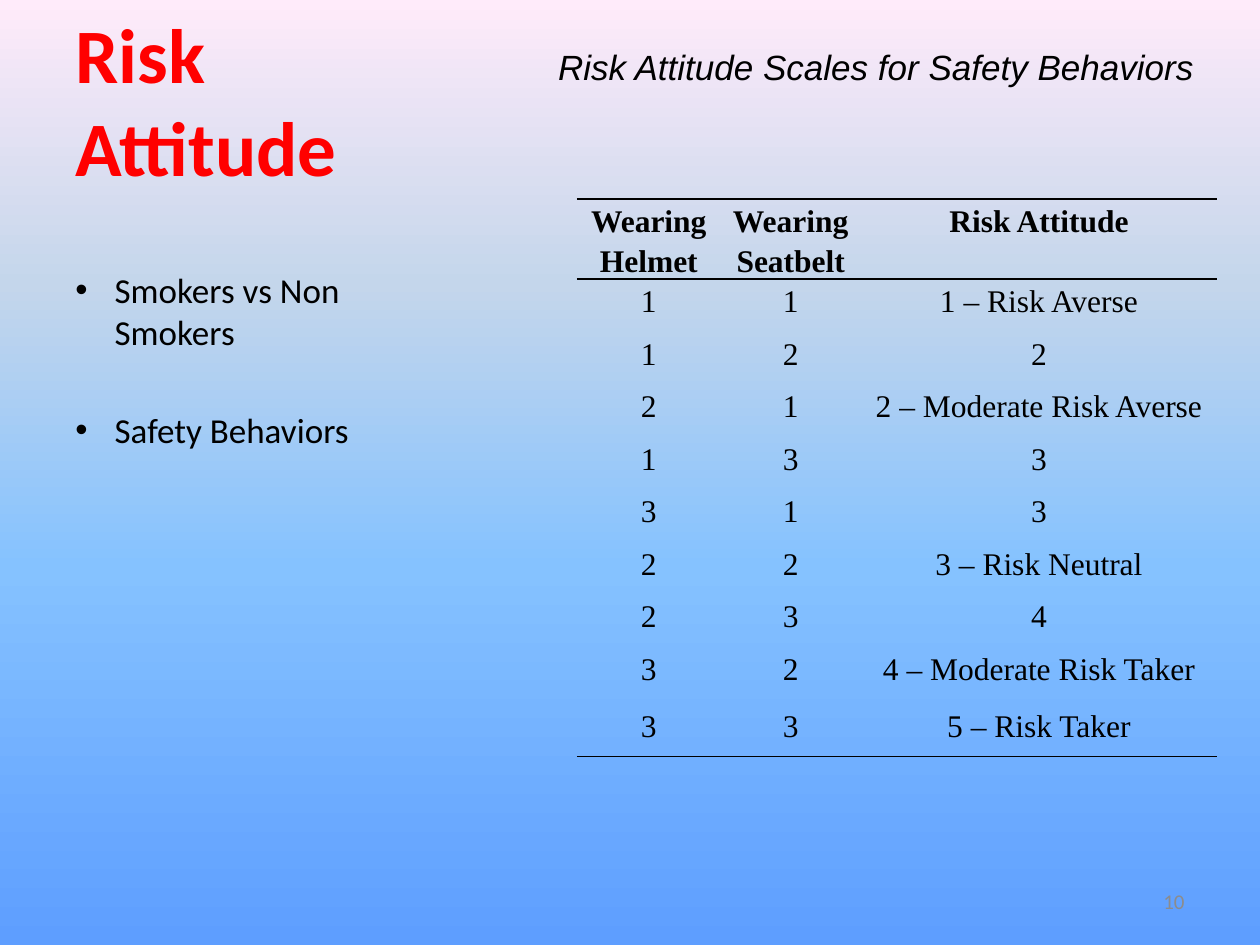
from dataclasses import dataclass

from lxml.etree import SubElement
from pptx import Presentation
from pptx.dml.color import RGBColor
from pptx.enum.text import MSO_ANCHOR, PP_ALIGN
from pptx.oxml.ns import qn
from pptx.util import Cm, Pt

COLORS = {"title": "FF0000", "text": "000000", "number": "8C8C8C"}
BACKGROUND = {0: "5E9EFF", 40: "85C2FF", 70: "C4D6EB", 100: "FFEBFA"}
COLUMNS = (2.9, 2.82, 7.19)
ROW_HEIGHT, TALL_ROW_HEIGHT, TALL_ROW = 1.06, 1.14, 8
ROWS = (
    ("Wearing Helmet", "Wearing Seatbelt", "Risk Attitude"),
    ("1", "1", "1 – Risk Averse"),
    ("1", "2", "2"),
    ("2", "1", "2 – Moderate Risk Averse"),
    ("1", "3", "3"),
    ("3", "1", "3"),
    ("2", "2", "3 – Risk Neutral"),
    ("2", "3", "4"),
    ("3", "2", "4 – Moderate Risk Taker"),
    ("3", "3", "5 – Risk Taker"),
)


@dataclass
class TextItem:
    """Text box with its place in centimetres and its type."""

    text: str
    left: float
    top: float
    width: float
    height: float
    size: float
    color: str = "text"
    font: str = "Calibri"
    bold: bool = False
    italic: bool = False
    align: PP_ALIGN = PP_ALIGN.LEFT
    anchor: MSO_ANCHOR = MSO_ANCHOR.TOP
    bullets: bool = False


ITEMS = (
    TextItem("Risk Attitude", 1.27, 0.76, 8.36, 3.23, 44, "title",
             bold=True, anchor=MSO_ANCHOR.BOTTOM),
    TextItem("Smokers vs Non Smokers\nSafety Behaviors",
             1.27, 5.28, 8.36, 11.73, 20, bullets=True),
    TextItem("10", 18.21, 17.65, 5.92, 1.02, 12, "number",
             align=PP_ALIGN.RIGHT, anchor=MSO_ANCHOR.MIDDLE),
    TextItem("Risk Attitude Scales for Safety Behaviors",
             11, 0.79, 13.77, 1.88, 20, font="Arial", italic=True),
)


def format_runs(p, size: float, color: str, font: str,
                bold: bool = False, italic: bool = False) -> None:
    """Apply one type style to every run of a paragraph."""
    for r in p.runs:
        r.font.size = Pt(size)
        r.font.name = font
        r.font.bold = bold
        r.font.italic = italic
        r.font.color.rgb = RGBColor.from_string(COLORS[color])


def add_bullet(p, first: bool) -> None:
    """Give a paragraph a hanging bullet and its spacing."""
    pPr = p._p.get_or_add_pPr()
    pPr.set("marL", str(Cm(0.79)))
    pPr.set("indent", str(-Cm(0.79)))
    p.space_before = Pt(4 if first else 32.4)
    SubElement(pPr, qn("a:buFont"), typeface="Arial")
    SubElement(pPr, qn("a:buChar"), char="•")


def add_text(s, item: TextItem) -> None:
    """Draw one text item."""
    sp = s.shapes.add_textbox(Cm(item.left), Cm(item.top),
                              Cm(item.width), Cm(item.height))
    tf = sp.text_frame
    tf.word_wrap = True
    tf.vertical_anchor = item.anchor
    tf.text = item.text
    for i, p in enumerate(tf.paragraphs):
        p.alignment = item.align
        format_runs(p, item.size, item.color, item.font, item.bold, item.italic)
        if item.bullets:
            add_bullet(p, i == 0)


def set_borders(cell, visible: str) -> None:
    """Rule the named sides of a cell and clear the others."""
    tcPr = cell._tc.get_or_add_tcPr()
    for side in "LRTB":
        ln = SubElement(tcPr, qn(f"a:ln{side}"), w=str(Pt(1)))
        if side in visible:
            fill = SubElement(ln, qn("a:solidFill"))
            SubElement(fill, qn("a:srgbClr"), val=COLORS["text"])
        else:
            SubElement(ln, qn("a:noFill"))


def add_scale_table(s) -> None:
    """Draw the risk attitude scale."""
    heights = [TALL_ROW_HEIGHT if i == TALL_ROW else ROW_HEIGHT
               for i in range(len(ROWS))]
    table = s.shapes.add_table(len(ROWS), len(COLUMNS), Cm(11.63), Cm(4.01),
                               Cm(sum(COLUMNS)), Cm(sum(heights))).table
    table.first_row = table.horz_banding = False
    for column, width in zip(table.columns, COLUMNS):
        column.width = Cm(width)
    rules = {0: "TB", 1: "T", len(ROWS) - 1: "B"}
    for i, values in enumerate(ROWS):
        table.rows[i].height = Cm(heights[i])
        for cell, value in zip(table.rows[i].cells, values):
            cell.margin_left = cell.margin_right = Cm(0.18)
            cell.margin_top = cell.margin_bottom = 0
            set_borders(cell, rules.get(i, ""))
            cell.fill.background()
            cell.text_frame.text = value
            p = cell.text_frame.paragraphs[0]
            p.alignment = PP_ALIGN.CENTER
            p.line_spacing = 1.15
            format_runs(p, 18, "text", "Times New Roman", bold=i == 0)


def set_background(s) -> None:
    """Fill the slide with an upward gradient."""
    fill = s.background.fill
    fill.gradient()
    fill.gradient_angle = 90
    gsLst = next(s._element.iter(qn("a:gsLst")))
    for gs in list(gsLst):
        gsLst.remove(gs)
    for position, color in BACKGROUND.items():
        gs = SubElement(gsLst, qn("a:gs"), pos=str(position * 1000))
        SubElement(gs, qn("a:srgbClr"), val=color)


def main() -> None:
    """Build and save the slide."""
    prs = Presentation()
    prs.slide_width, prs.slide_height = Cm(25.4), Cm(19.05)
    s = prs.slides.add_slide(prs.slide_layouts[6])
    set_background(s)
    add_scale_table(s)
    for item in ITEMS:
        add_text(s, item)
    prs.save("out.pptx")


if __name__ == "__main__":
    main()
